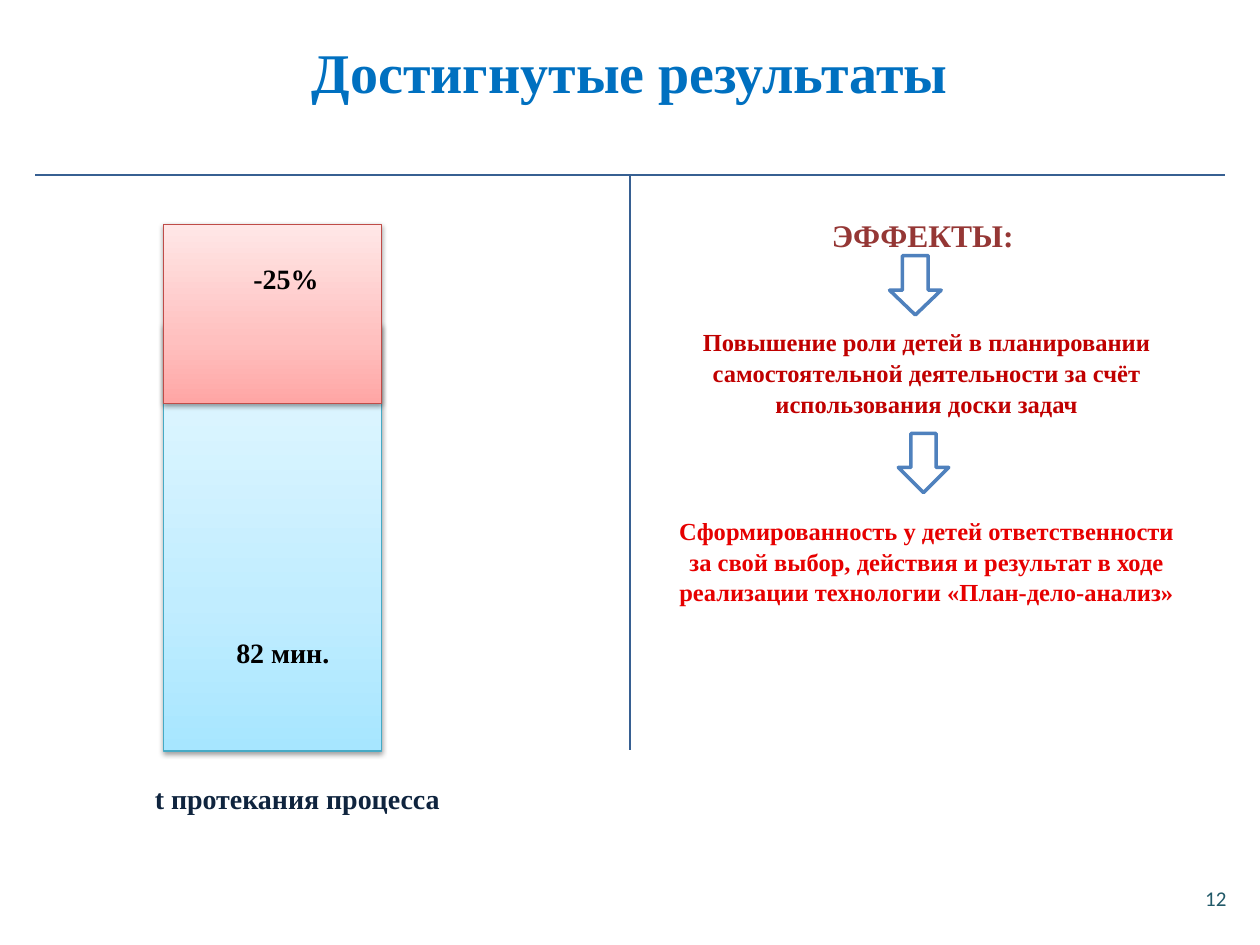
from copy import deepcopy
from lxml.etree import SubElement
from pptx import Presentation
from pptx.dml.color import RGBColor
from pptx.enum.shapes import MSO_CONNECTOR, MSO_SHAPE
from pptx.enum.text import MSO_ANCHOR, PP_ALIGN
from pptx.oxml.ns import qn
from pptx.util import Pt

SCALE = 9144
SERIF = "Times New Roman"
HEX = {
    "title": "0070C0", "rule": "376092", "arrow": "4F81BD", "white": "FFFFFF",
    "black": "000000", "navy": "0F243E", "teal": "215968", "brown": "953735",
    "dark": "C00000", "red": "E60000", "blue edge": "46AAC5", "red edge": "BF4C48",
}
BLUES = ("A7E6FF", "C1EDFF", "E7F8FF")
REDS = ("FFA6A5", "FFC0BF", "FFE7E7")


def px(*nums):
    return [num * SCALE for num in nums]


def tint(name):
    return RGBColor.from_string(HEX[name])


def write(para, text, size, color, font=SERIF, bold=True):
    para.alignment = PP_ALIGN.CENTER
    run = para.add_run()
    run.text = text
    run.font.name = font
    run.font.size = Pt(size)
    run.font.bold = bold
    run.font.color.rgb = tint(color)


def add_frame(slide, box, anchor=MSO_ANCHOR.TOP):
    frame = slide.shapes.add_textbox(*px(*box)).text_frame
    frame.word_wrap = True
    frame.vertical_anchor = anchor
    return frame


def add_label(slide, box, text, color, size=16, anchor=MSO_ANCHOR.TOP, **style):
    frame = add_frame(slide, box, anchor)
    write(frame.paragraphs[0], text, size, color, **style)


def add_title(slide, text):
    title = slide.shapes.title
    title.left, title.top, title.width, title.height = px(12, 21, 976, 71)
    title.text_frame.vertical_anchor = MSO_ANCHOR.MIDDLE
    write(title.text_frame.paragraphs[0], text, 32, "title")


def add_shade(shape):
    shape.shadow.inherit = False
    effects = shape._element.spPr.find(qn("a:effectLst"))
    shade = SubElement(effects, qn("a:outerShdw"), blurRad=str(Pt(3.1)),
                       dist=str(Pt(1.6)), dir="5400000", rotWithShape="0")
    color = SubElement(shade, qn("a:srgbClr"), val=HEX["black"])
    SubElement(color, qn("a:alpha"), val="38000")


def add_bar(slide, box, colors, edge):
    bar = slide.shapes.add_shape(MSO_SHAPE.RECTANGLE, *px(*box))
    bar.fill.gradient()
    bar.fill.gradient_angle = 90
    first = bar._element.spPr.find(".//" + qn("a:gs"))
    first.addnext(deepcopy(first))
    for stop, color, place in zip(bar.fill.gradient_stops, colors, (0, 0.35, 1)):
        stop.color.rgb = RGBColor.from_string(color)
        stop.position = place
    bar.line.color.rgb = tint(edge)
    bar.line.width = Pt(0.75)
    add_shade(bar)


def add_rule(slide, *ends):
    rule = slide.shapes.add_connector(MSO_CONNECTOR.STRAIGHT, *px(*ends))
    rule.line.color.rgb = tint("rule")
    rule.line.width = Pt(1.5)
    SubElement(rule._element.spPr, qn("a:effectLst"))


def add_arrow(slide, box, head=0.5):
    arrow = slide.shapes.add_shape(MSO_SHAPE.DOWN_ARROW, *px(*box))
    arrow.adjustments[1] = head
    arrow.fill.solid()
    arrow.fill.fore_color.rgb = tint("white")
    arrow.line.color.rgb = tint("arrow")
    arrow.line.width = Pt(2)
    arrow.shadow.inherit = False


def add_list(slide, box, items):
    frame = add_frame(slide, box)
    for num, (text, size, color, gap) in enumerate(items):
        para = frame.add_paragraph() if num else frame.paragraphs[0]
        para.line_spacing = 1.05
        para.space_before = Pt(gap)
        write(para, text, size, color)


def main():
    deck = Presentation()
    deck.slide_width, deck.slide_height = px(1000, 750)
    slide = deck.slides.add_slide(deck.slide_layouts[5])
    add_title(slide, "Достигнутые результаты")
    add_bar(slide, (130, 257, 173, 339), BLUES, "blue edge")
    add_list(slide, (524, 165, 423, 535), (
        ("ЭФФЕКТЫ: ", 18, "brown", 0),
        ("Повышение роли детей в планировании самостоятельной деятельности "
         "за счёт использования доски задач", 14, "dark", 41),
        ("Сформированность у детей ответственности за свой выбор, действия и "
         "результат в ходе реализации технологии «План-дело-анализ»",
         14, "red", 55),
    ))
    add_rule(slide, 28, 139, 972, 139)
    add_rule(slide, 500, 139, 500, 595)
    add_arrow(slide, (706, 203, 41, 47), 0.48)
    add_arrow(slide, (713, 344, 40, 47))
    add_bar(slide, (130, 178, 173, 142), REDS, "red edge")
    add_label(slide, (152, 203, 150, 37), "-25%", "black")
    add_label(slide, (146, 391, 157, 145), "82 мин.", "black",
              anchor=MSO_ANCHOR.BOTTOM)
    add_label(slide, (106, 615, 260, 37), "t протекания процесса", "navy")
    add_label(slide, (946, 697, 38, 31), "12", "teal", 12, MSO_ANCHOR.MIDDLE,
              font="Calibri", bold=False)
    deck.save("out.pptx")


if __name__ == "__main__":
    main()
